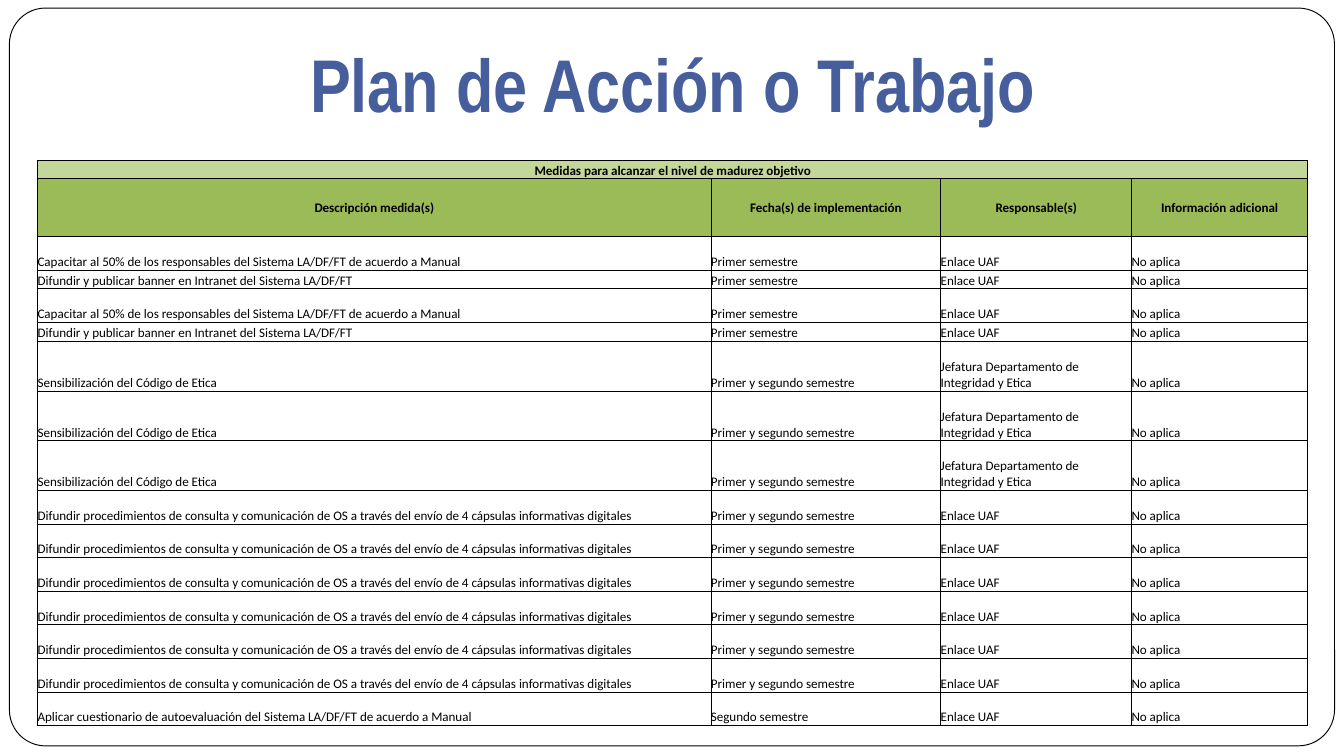
"""Builds the action plan slide: a framed title above a table of measures."""
from dataclasses import dataclass

from lxml.etree import SubElement
from pptx import Presentation
from pptx.dml.color import RGBColor
from pptx.enum.shapes import MSO_SHAPE as SHAPE
from pptx.enum.text import MSO_ANCHOR as ANCHOR, PP_ALIGN as ALIGN
from pptx.oxml.ns import qn
from pptx.slide import Slide
from pptx.table import Table, _Cell as Cell
from pptx.util import Inches, Pt

COLORS = {
    "title": "465E9C",
    "text": "000000",
    "line": "000000",
    "frame": "FFFFFF",
    "banner": "C4D79B",
    "header": "9BBB59",
}
COL_WIDTHS = [5.01, 1.71, 1.42, 1.31]
BANNER = "Medidas para alcanzar el nivel de madurez objetivo"
HEADERS = [
    "Descripción medida(s)",
    "Fecha(s) de implementación",
    "Responsable(s)",
    "Información adicional",
]


@dataclass(frozen=True)
class CellStyle:
    """Look shared by the cells of one kind of row."""
    fill: str | None = None
    bold: bool = False
    align: ALIGN = ALIGN.LEFT
    anchor: ANCHOR = ANCHOR.BOTTOM


@dataclass(frozen=True)
class Measure:
    """One measure of the plan, with its row height in inches."""
    description: str
    date: str
    owner: str = "Enlace UAF"
    height: float = 0.25
    extra: str = "No aplica"

    def texts(self) -> list[str]:
        """Return the cell texts from left to right."""
        return [self.description, self.date, self.owner, self.extra]


BANNER_STYLE = CellStyle("banner", True, ALIGN.CENTER)
HEADER_STYLE = CellStyle("header", True, ALIGN.CENTER, ANCHOR.MIDDLE)
BODY_STYLE = CellStyle()

FIRST, BOTH, SECOND = "Primer semestre", "Primer y segundo semestre", "Segundo semestre"
TRAINING = Measure("Capacitar al 50% de los responsables del Sistema LA/DF/FT de acuerdo a Manual", FIRST)
INTRANET = Measure("Difundir y publicar banner en Intranet del Sistema LA/DF/FT", FIRST, height=0.14)
ETHICS = Measure(
    "Sensibilización del Código de Etica", BOTH,
    "Jefatura Departamento de Integridad y Etica", 0.37,
)
CAPSULES = Measure(
    "Difundir procedimientos de consulta y comunicación de OS a través del envío "
    "de 4 cápsulas informativas digitales", BOTH,
)
SURVEY = Measure("Aplicar cuestionario de autoevaluación del Sistema LA/DF/FT de acuerdo a Manual", SECOND)
MEASURES = [TRAINING, INTRANET] * 2 + [ETHICS] * 3 + [CAPSULES] * 6 + [SURVEY]


def rgb(name: str) -> RGBColor:
    """Return a named colour."""
    return RGBColor.from_string(COLORS[name])


def add_frame(s: Slide) -> None:
    """Draw the rounded frame around the slide."""
    sp = s.shapes.add_shape(SHAPE.ROUNDED_RECTANGLE, Inches(0.07), Inches(0.06), Inches(9.86), Inches(5.49))
    sp.adjustments[0] = 0.049
    sp.shadow.inherit = False
    sp.fill.solid()
    sp.fill.fore_color.rgb = rgb("frame")
    sp.line.color.rgb = rgb("line")
    sp.line.width = Pt(0.5)


def add_title(s: Slide, text: str) -> None:
    """Write the slide title."""
    sp = s.shapes.add_textbox(Inches(0.28), Inches(0.23), Inches(9.45), Inches(0.94))
    tf = sp.text_frame
    tf.word_wrap = True
    tf.vertical_anchor = ANCHOR.TOP
    tf.margin_bottom = Inches(0.1)
    tf.text = text
    p = tf.paragraphs[0]
    p.alignment = ALIGN.CENTER
    font = p.runs[0].font
    font.name, font.size, font.bold = "Arial Narrow", Pt(40), True
    font.color.rgb = rgb("title")


def style_cell(cell: Cell, style: CellStyle) -> None:
    """Give a cell its borders, margins and fill."""
    cell.margin_left = cell.margin_right = cell.margin_top = cell.margin_bottom = 0
    cell.vertical_anchor = style.anchor
    tc_pr = cell._tc.get_or_add_tcPr()
    for side in ("lnL", "lnR", "lnT", "lnB"):
        ln = SubElement(tc_pr, qn(f"a:{side}"), w=str(Pt(0.5)))
        fill = SubElement(ln, qn("a:solidFill"))
        SubElement(fill, qn("a:srgbClr"), val=COLORS["line"])
    if style.fill:
        cell.fill.solid()
        cell.fill.fore_color.rgb = rgb(style.fill)
    else:
        cell.fill.background()


def fill_row(table: Table, row: int, height: float, texts: list[str], style: CellStyle) -> None:
    """Style a whole row and write its texts."""
    table.rows[row].height = Inches(height)
    for cell in table.rows[row].cells:
        style_cell(cell, style)
    for col, text in enumerate(texts):
        cell = table.cell(row, col)
        cell.text_frame.text = text
        p = cell.text_frame.paragraphs[0]
        p.alignment = style.align
        font = p.runs[0].font
        font.name, font.size, font.bold = "Calibri", Pt(7), style.bold
        font.color.rgb = rgb("text")


def add_plan(s: Slide) -> None:
    """Add the table of measures."""
    frame = s.shapes.add_table(
        len(MEASURES) + 2, len(COL_WIDTHS), Inches(0.28), Inches(1.19), Inches(9.45), Inches(4.22)
    )
    table = frame.table
    table.first_row = table.horz_banding = False
    for column, width in zip(table.columns, COL_WIDTHS):
        column.width = Inches(width)
    table.cell(0, 0).merge(table.cell(0, len(COL_WIDTHS) - 1))
    fill_row(table, 0, 0.14, [BANNER], BANNER_STYLE)
    fill_row(table, 1, 0.43, HEADERS, HEADER_STYLE)
    for row, measure in enumerate(MEASURES, start=2):
        fill_row(table, row, measure.height, measure.texts(), BODY_STYLE)


def main() -> None:
    """Build and save the slide."""
    prs = Presentation()
    prs.slide_width = Inches(10)
    prs.slide_height = prs.slide_width * 9 // 16
    s = prs.slides.add_slide(prs.slide_layouts[6])
    add_frame(s)
    add_title(s, "Plan de Acción o Trabajo")
    add_plan(s)
    prs.save("out.pptx")


if __name__ == "__main__":
    main()
